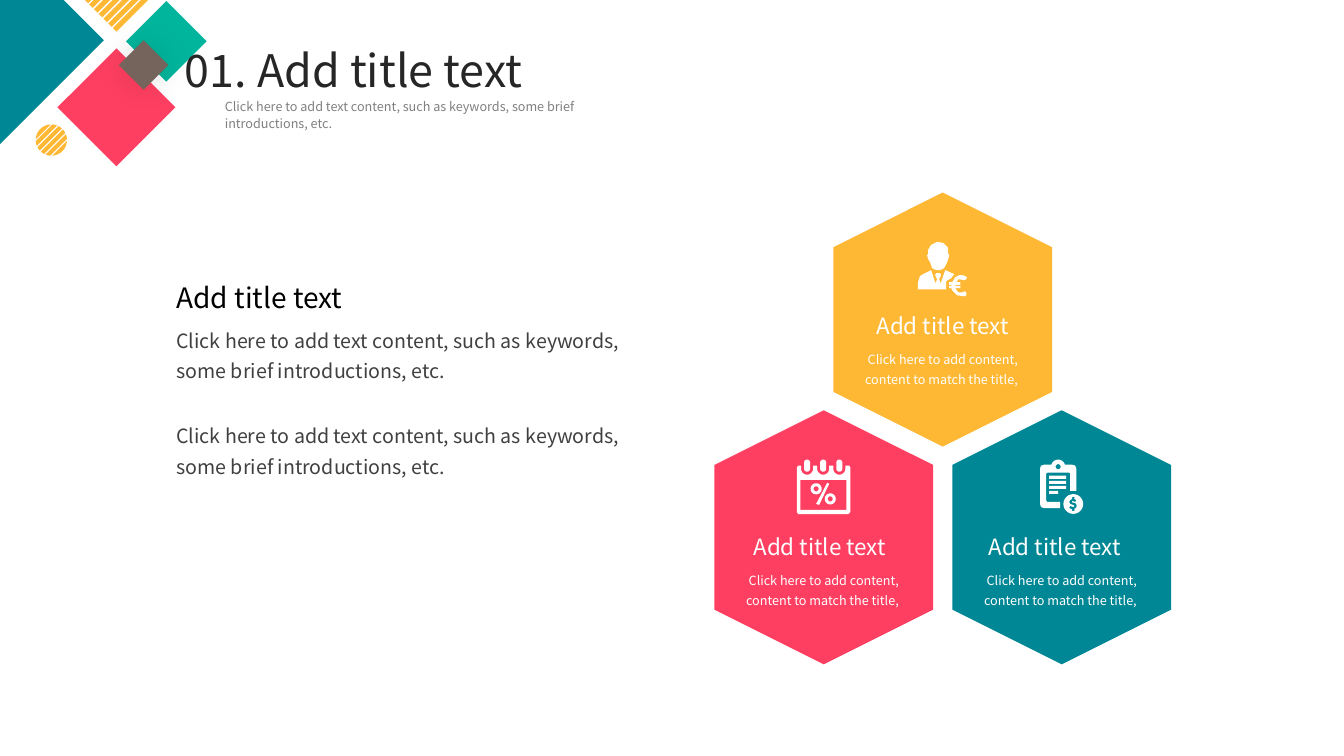
from dataclasses import dataclass
from math import acos, cos, degrees, pi, sin

from lxml.etree import SubElement
from pptx import Presentation
from pptx.dml.color import RGBColor
from pptx.enum.shapes import MSO_SHAPE as SHAPE
from pptx.enum.text import MSO_ANCHOR as ANCHOR, MSO_AUTO_SIZE as AUTO, PP_ALIGN as ALIGN
from pptx.oxml.ns import qn
from pptx.util import Inches, Pt


@dataclass(frozen=True)
class Theme:
    font: str = "Noto Sans CJK SC"
    teal: str = "008795"
    pink: str = "FE3F61"
    amber: str = "FEB834"
    green: str = "01B59C"
    brown: str = "75645C"
    white: str = "FFFFFF"
    black: str = "000000"
    ink: str = "262626"
    body: str = "404040"
    muted: str = "808080"
    title_size: int = 32
    heading_size: int = 20
    card_size: int = 16
    body_size: int = 14
    small_size: int = 9


T = Theme()
INTRO = "Click here to add text content, such as keywords, some brief introductions, etc."
CARD_TEXT = "Click here to add content, content to match the title, "

# Card grid: centre of the lower left hexagon, column and row pitch
CARD_X, CARD_Y, COL, ROW = 8.17, 5.33, 1.18, 2.16
HEX_LONG, HEX_SHORT = 2.52, 2.17


# Text
def put_text(sp, text, box, size, color, align=ALIGN.LEFT, spacing=1.0, wrap=True):
    sp.left, sp.top, sp.width, sp.height = map(Inches, box)
    tf = sp.text_frame
    tf.word_wrap, tf.auto_size, tf.vertical_anchor = wrap, AUTO.NONE, ANCHOR.TOP
    tf.margin_left = tf.margin_right = Inches(0.1)
    tf.margin_top = tf.margin_bottom = Inches(0.05)
    p = tf.paragraphs[0]
    p.alignment, p.line_spacing = align, spacing
    p.space_before = p.space_after = Pt(0)
    pPr = p._p.get_or_add_pPr()
    pPr.set("marL", "0")
    pPr.set("indent", "0")
    SubElement(pPr, qn("a:buNone"))
    r = p.add_run()
    r.text = text
    r.font.name, r.font.size, r.font.bold = T.font, Pt(size), False
    r.font.color.rgb = RGBColor.from_string(color)


def add_text(shapes, text, box, size, color, **fmt):
    put_text(shapes.add_textbox(0, 0, 0, 0), text, box, size, color, **fmt)


# Shapes
def paint(sp, color):
    sp.shadow.inherit = False
    sp.fill.solid()
    sp.fill.fore_color.rgb = RGBColor.from_string(color)
    sp.line.fill.background()
    return sp


def add_preset(shapes, kind, box, color, rotation=0):
    sp = paint(shapes.add_shape(kind, *map(Inches, box)), color)
    sp.rotation = rotation
    return sp


def add_outline(shapes, contours, left, top, color):
    """Draw closed contours, given in hundredths of an inch, as one shape."""
    fine = [[(x * 100, y * 100) for x, y in c] for c in contours]
    fb = shapes.build_freeform(*fine[0][0], scale=Inches(1) / 10000)
    for i, points in enumerate(fine):
        if i:
            fb.move_to(*points[0])
        fb.add_line_segments(points[1:], close=True)
    paint(fb.convert_to_shape(Inches(left), Inches(top)), color)


def add_glow(sp):
    shadow = SubElement(sp._element.spPr.find(qn("a:effectLst")), qn("a:outerShdw"),
                        blurRad=str(Pt(21)), dist="0", dir="0", rotWithShape="0")
    clr = SubElement(shadow, qn("a:srgbClr"), val=T.black)
    SubElement(clr, qn("a:alpha"), val="13000")


# Contours
def arc(cx, cy, rx, ry, start=0, end=360, steps=16):
    angles = [(start + (end - start) * i / steps) * pi / 180 for i in range(steps + 1)]
    return [(cx + rx * cos(a), cy + ry * sin(a)) for a in angles]


def disc(cx, cy, r):
    return arc(cx, cy, r, r, steps=24)


def rect(x1, y1, x2, y2):
    return [(x1, y1), (x2, y1), (x2, y2), (x1, y2)]


def striped_disc(r, pitch, half):
    """Bands of a disc, cut by parallel lines that rise to the right."""
    bands = []
    for k in range(-2, 4):
        d1 = max(-r, min(r, (k - 0.5) * pitch - half))
        d2 = max(-r, min(r, (k - 0.5) * pitch + half))
        a1, a2 = degrees(acos(d1 / r)), degrees(acos(d2 / r))
        bands.append(arc(0, 0, r, r, 45 + a2, 45 + a1, 6)
                     + arc(0, 0, r, r, 45 - a1, 45 - a2, 6))
    return bands


# Icons
def person_icon():
    head = [(19, 0), (25, 1), (27, 3), (30, 6), (30, 12), (31, 13), (30, 17), (29, 20),
            (26, 26), (22, 28), (18, 28), (14, 26), (12, 20), (10, 17), (9, 13),
            (10, 12), (10, 8), (13, 3), (17, 1)]
    suit = [(0, 47), (0, 40), (2, 34), (5, 32), (13, 28), (17, 40), (17, 42), (19, 37),
            (17, 33), (18, 31), (22, 31), (23, 33), (21, 37), (23, 42), (23, 40), (27, 28),
            (36, 32), (32, 37), (31, 37), (28, 39), (28, 47)]
    euro = [(44, 33), (47, 34), (48.5, 35), (48, 37), (46, 38), (40, 37), (38, 40), (42, 40),
            (42, 43), (37, 43), (37, 44), (42, 44), (42, 46), (37, 46), (40, 50), (44, 50),
            (47, 49), (48, 51), (48, 53), (46, 54), (39, 53), (34, 48), (33, 46), (31, 46),
            (31, 44), (33, 44), (33, 43), (31, 43), (31, 40), (34, 40), (37, 35), (41, 33)]
    return [head, suit, euro]


def calendar_icon():
    pegs = (10, 26, 42)
    page = [(0, 8), (1, 6)]
    for x in pegs:
        page += [(x - 6, 6)] + arc(x, 9, 6, 6, 180, 0) + [(x + 6, 6)]
    page += [(52, 6), (53, 8), (53, 52), (51, 54), (1, 54), (0, 52)]
    capsules = [arc(x, 3, 3, 3, 180, 360) + arc(x, 9, 3, 3, 0, 180) for x in pegs]
    rings = [disc(x, y, r) for x, y in ((19, 29), (33, 39)) for r in (5.5, 2.5)]
    slash = [(30, 23), (32, 24), (22, 45), (19, 44)]
    return [page, rect(3.5, 20, 49, 50), *capsules, *rings, slash]


def clipboard_icon():
    board = [(0, 9), (1, 6), (4, 5), (11, 5), *arc(18, 7, 7, 7, 195, 345), (25, 5), (32, 5),
             (35, 6), (36, 9), (36, 31), (30, 31), (30, 14), (29, 13), (7, 13), (6, 14),
             (6, 40), (7, 42), (20, 42), (20, 48), (4, 48), (1, 47), (0, 44)]
    lines = [rect(9, y, 18 if y == 31 else 26, y + 3) for y in range(16, 32, 5)]
    dollar = [(32, 37), (34, 37), (34, 39), (36, 40), (35, 42), (32, 41), (32, 42.5),
              (35, 43), (36.5, 45), (36, 47.5), (34, 49), (34, 51), (32, 51), (32, 49.5),
              (29, 48), (30, 46), (33, 47), (34, 46), (33, 45), (30, 44), (29, 42),
              (30, 40), (32, 39)]
    return [board, disc(18, 7, 2.5), *lines, disc(33, 44, 9.8), dollar]


# Slide parts
def add_decor(s):
    grp = s.shapes.add_group_shape()
    shapes = grp.shapes
    add_preset(shapes, SHAPE.DIAMOND, (-1.05, -0.64, 2.08, 2.08), T.teal)
    add_preset(shapes, SHAPE.DIAMOND, (0.57, 0.48, 1.17, 1.17), T.pink)
    for i in range(7):
        step = 0.047 * i
        add_preset(shapes, SHAPE.RECTANGLE, (0.99 + step, -0.37 + step, 0.05, 0.45), T.amber, 45)
    add_preset(shapes, SHAPE.DIAMOND, (1.25, 0.01, 0.8, 0.8), T.green)
    add_glow(add_preset(shapes, SHAPE.DIAMOND, (1.18, 0.4, 0.49, 0.49), T.brown))
    add_outline(shapes, striped_disc(15.5, 5.4, 2), 0.51, 1.39, T.amber)
    # Keep the title in front of the diamonds
    grp.element.getparent().insert(2, grp.element)


def add_card(s, col, row, color, icon, icon_width, title_shift, drop):
    cx, cy = CARD_X + COL * col, CARD_Y + ROW * row
    shapes = s.shapes.add_group_shape().shapes
    add_preset(shapes, SHAPE.HEXAGON,
               (cx - HEX_LONG / 2, cy - HEX_SHORT / 2, HEX_LONG, HEX_SHORT), color, 90)
    add_outline(shapes, icon, cx - icon_width / 2, cy - 0.77, T.white)
    add_text(shapes, CARD_TEXT, (cx - 0.91, cy + 0.23 + drop, 1.82, 0.48),
             T.small_size, T.white, align=ALIGN.CENTER, spacing=1.3)
    add_text(shapes, "Add title text", (cx - 0.95 + title_shift, cy - 0.12 + drop, 1.9, 0.37),
             T.card_size, T.white, align=ALIGN.CENTER)


def main():
    prs = Presentation()
    prs.slide_width, prs.slide_height = Inches(13.33), Inches(7.5)
    s = prs.slides.add_slide(prs.slide_layouts[4])
    title, heading, first, subtitle, second = s.placeholders

    # Header
    put_text(title, "01. Add title text", (1.63, 0.37, 3.76, 0.64), T.title_size, T.ink,
             align=ALIGN.CENTER, wrap=False)
    put_text(subtitle, INTRO, (2.13, 0.91, 3.7, 0.45), T.small_size, T.muted, spacing=1.14)
    add_decor(s)

    # Left column
    put_text(heading, "Add title text", (1.65, 2.73, 2.17, 0.44), T.heading_size, T.black)
    for sp, top in ((first, 3.14), (second, 4.09)):
        put_text(sp, INTRO, (1.65, top, 4.87, 0.68), T.body_size, T.body, spacing=1.3)

    # Hexagon cards
    add_card(s, 1, -1, T.amber, person_icon(), 0.49, 0, 0)
    add_card(s, 0, 0, T.pink, calendar_icon(), 0.53, -0.04, 0.03)
    add_card(s, 2, 0, T.teal, clipboard_icon(), 0.43, -0.07, 0.03)

    prs.save("out.pptx")


if __name__ == "__main__":
    main()
